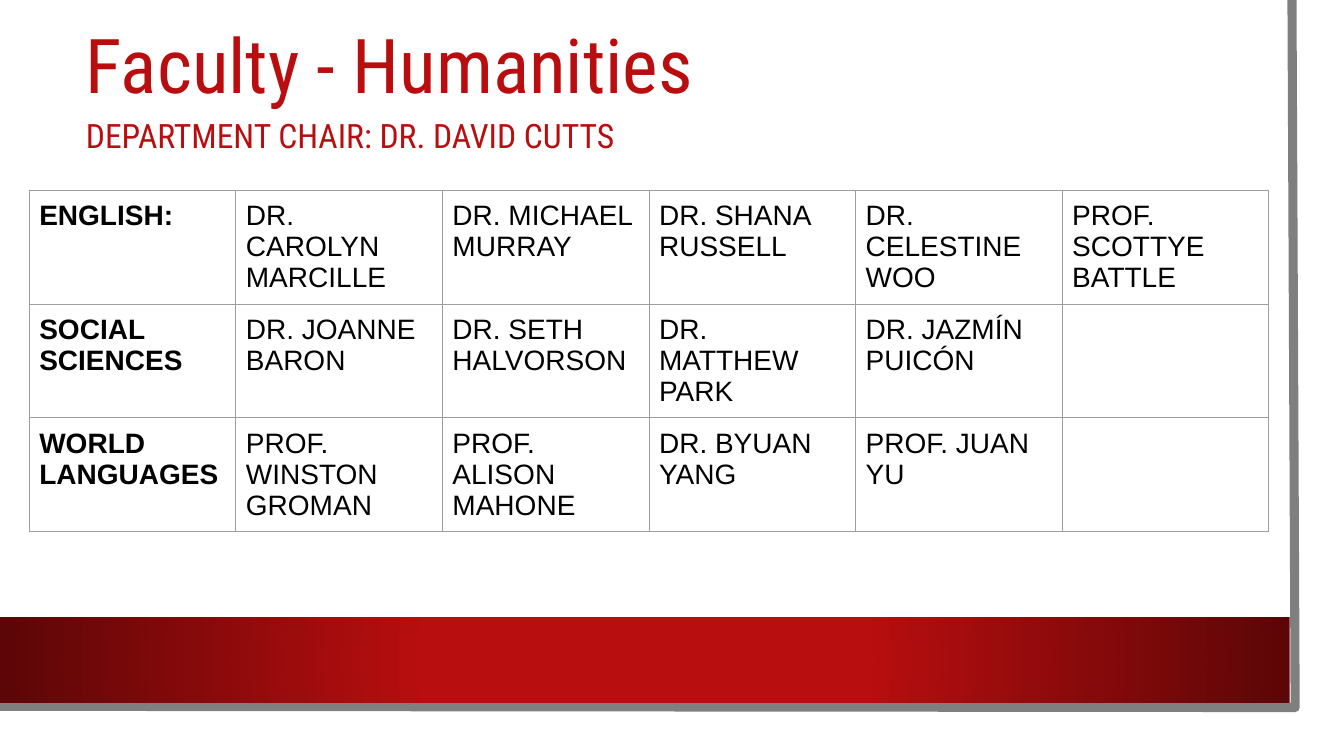
from lxml import etree
from pptx import Presentation
from pptx.dml.color import RGBColor
from pptx.enum.shapes import MSO_SHAPE as Shape
from pptx.enum.text import MSO_ANCHOR as Anchor, MSO_AUTO_SIZE as AutoSize, PP_ALIGN as Align
from pptx.oxml import parse_xml
from pptx.oxml.ns import nsdecls, qn
from pptx.util import Cm, Pt

RED = RGBColor(0xB8, 0x0E, 0x0F)
DARK_RED = RGBColor(0x5C, 0x06, 0x07)
FRAME_GREY = RGBColor(0x7F, 0x7F, 0x7F)
GRID_GREY = RGBColor(0x9E, 0x9E, 0x9E)
BLACK = RGBColor(0, 0, 0)

TITLE_FONT = "Roboto Condensed"
TABLE_FONT = "Arial"

# One row per department; a cell is a list of paragraphs
FACULTY = [
    [["ENGLISH:"], ["DR. CAROLYN MARCILLE"], ["DR. MICHAEL MURRAY"],
     ["DR. SHANA RUSSELL"], ["DR. CELESTINE WOO"], ["PROF. SCOTTYE", "BATTLE"]],
    [["SOCIAL SCIENCES"], ["DR. JOANNE BARON"], ["DR. SETH HALVORSON"],
     ["DR. MATTHEW PARK"], ["DR. JAZMÍN PUICÓN"], []],
    [["WORLD LANGUAGES"], ["PROF. WINSTON GROMAN"], ["PROF. ALISON MAHONE"],
     ["DR. BYUAN YANG"], ["PROF. JUAN YU"], []],
]


def add_run(paragraph, text, font_name, size, color, bold=False):
    run = paragraph.add_run()
    run.text = text
    run.font.name = font_name
    run.font.size = Pt(size)
    run.font.color.rgb = color
    run.font.bold = bold


def add_frame(slide, left, top, width, height):
    """Grey edge along the right and bottom sides."""
    outline = slide.shapes.build_freeform(left + width - Cm(0.08), top)
    outline.add_line_segments(
        [(left + width, top + height), (left, top + height - Cm(0.03))], close=False)
    edge = outline.convert_to_shape()
    edge.shadow.inherit = False
    edge.fill.background()
    edge.line.color.rgb = FRAME_GREY
    edge.line.width = Pt(6.5)


def add_band(slide, left, top, width, height):
    """Red band that darkens away from its centre."""
    band = slide.shapes.add_shape(Shape.RECTANGLE, left, top, width, height)
    band.shadow.inherit = False
    band.line.fill.background()
    band.fill.background()
    stops = "".join(
        f'<a:gs pos="{percent * 1000}"><a:srgbClr val="{color}"/></a:gs>'
        for percent, color in [(0, RED), (34, RED), (100, DARK_RED)])
    gradient = parse_xml(
        f'<a:gradFill {nsdecls("a")} rotWithShape="1"><a:gsLst>{stops}</a:gsLst>'
        '<a:path path="circle"><a:fillToRect l="50000" t="50000" r="50000" b="50000"/>'
        '</a:path></a:gradFill>')
    properties = band.fill._xPr
    properties.replace(properties.find(qn("a:noFill")), gradient)


def add_heading(slide, left, top, width, height):
    """Title with the department chair below it."""
    heading = slide.shapes.title
    slide.shapes._spTree.append(heading._element)  # in front of the frame
    heading.left, heading.top, heading.width, heading.height = left, top, width, height
    frame = heading.text_frame
    frame.word_wrap = True
    frame.auto_size = AutoSize.NONE
    frame.vertical_anchor = Anchor.MIDDLE
    subject = frame.paragraphs[0]
    chair = frame.add_paragraph()
    chair.space_before = Pt(6.5)
    for paragraph, text, size in [(subject, "Faculty - Humanities", 54),
                                  (chair, "DEPARTMENT CHAIR: DR. DAVID CUTTS", 24)]:
        paragraph.alignment = Align.LEFT
        paragraph.line_spacing = 0.9
        add_run(paragraph, text, TITLE_FONT, size, RED)


def add_borders(cell):
    properties = cell._tc.get_or_add_tcPr()
    for side in ("lnL", "lnR", "lnT", "lnB"):
        border = etree.SubElement(properties, qn(f"a:{side}"), w=str(Pt(0.75)))
        fill = etree.SubElement(border, qn("a:solidFill"))
        etree.SubElement(fill, qn("a:srgbClr"), val=str(GRID_GREY))


def add_faculty_table(slide, left, top, width, height):
    """Departments in the first column, their faculty to the right."""
    table = slide.shapes.add_table(
        len(FACULTY), len(FACULTY[0]), left, top, width, height).table
    table.first_row = table.horz_banding = False
    for row, department in enumerate(FACULTY):
        for column, names in enumerate(department):
            cell = table.cell(row, column)
            add_borders(cell)
            cell.fill.background()
            cell.margin_left = cell.margin_right = Cm(0.25)
            cell.margin_top = cell.margin_bottom = Cm(0.25)
            frame = cell.text_frame
            for index, name in enumerate(names):
                paragraph = frame.add_paragraph() if index else frame.paragraphs[0]
                add_run(paragraph, name, TABLE_FONT, 20, BLACK, bold=column == 0)


def main():
    deck = Presentation()
    deck.slide_width, deck.slide_height = Cm(33.87), Cm(19.05)
    slide = deck.slides.add_slide(deck.slide_layouts[5])
    add_frame(slide, Cm(-0.08), Cm(0), Cm(32.72), Cm(17.83))
    add_band(slide, Cm(0), Cm(15.55), Cm(32.5), Cm(2.16))
    add_heading(slide, Cm(1.91), Cm(0.18), Cm(28.88), Cm(4.27))
    add_faculty_table(slide, Cm(0.74), Cm(4.79), Cm(31.24), Cm(8.61))
    deck.save("out.pptx")


if __name__ == "__main__":
    main()
